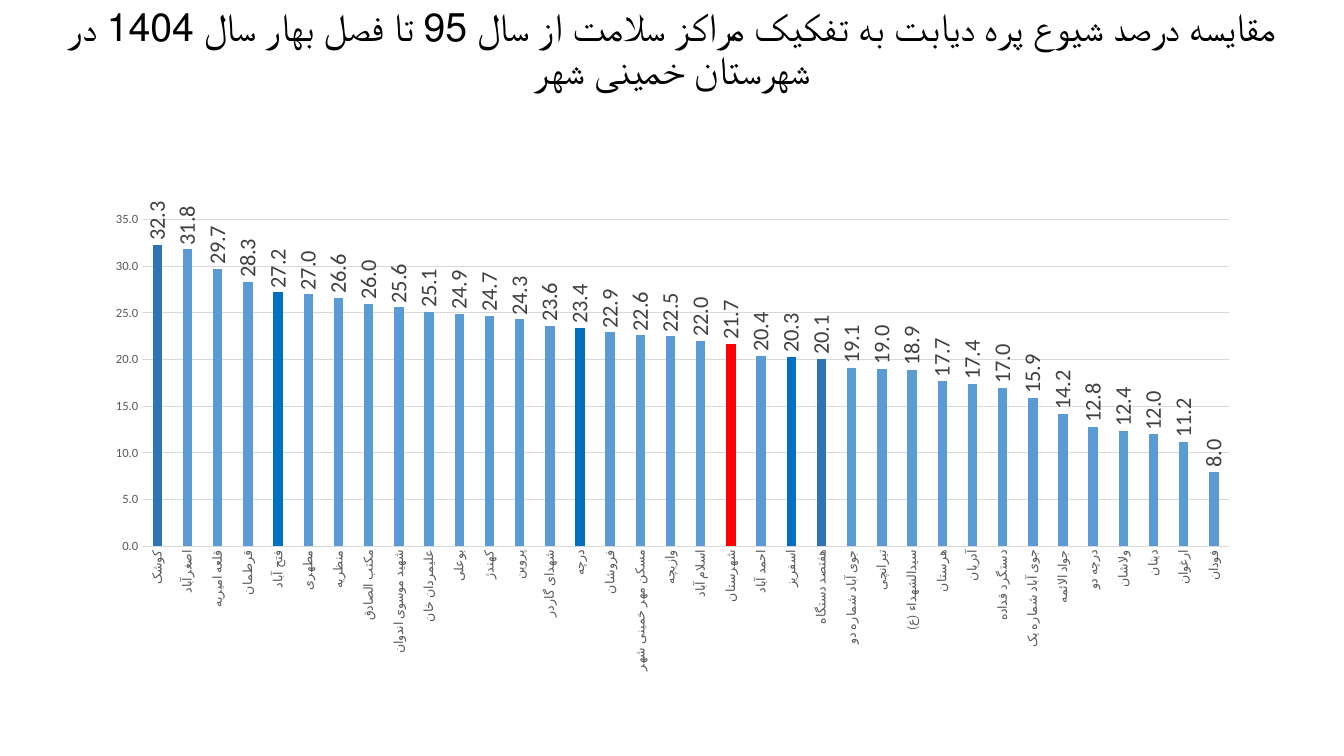
from dataclasses import dataclass

from pptx import Presentation
from pptx.chart.data import CategoryChartData
from pptx.dml.color import RGBColor
from pptx.enum.chart import XL_CHART_TYPE, XL_LABEL_POSITION, XL_TICK_MARK
from pptx.enum.text import MSO_ANCHOR, MSO_AUTO_SIZE, PP_ALIGN
from pptx.util import Inches, Pt

COLUMN = XL_CHART_TYPE.COLUMN_CLUSTERED
OUTER = XL_LABEL_POSITION.OUTSIDE_END
NO_TICK = XL_TICK_MARK.NONE
MIDDLE = MSO_ANCHOR.MIDDLE
NO_FIT = MSO_AUTO_SIZE.NONE
CENTER = PP_ALIGN.CENTER


@dataclass(frozen=True)
class Theme:
    font: str = "Calibri"
    ink: str = "000000"
    axis: str = "595959"
    label: str = "404040"
    grid: str = "D9D9D9"
    bar: str = "5B9BD5"
    deep: str = "2E75B6"
    blue: str = "0070C0"
    red: str = "FF0000"
    title_size: int = 28
    base_size: int = 10
    axis_size: int = 9
    label_size: int = 16


THEME = Theme()
WIDTH, HEIGHT = Inches(13.33), Inches(7.5)
UPRIGHT = "-5400000"
TITLE = ("مقایسه درصد شیوع پره دیابت به تفکیک مراکز سلامت از سال 95 "
         "تا فصل بهار سال 1404 در شهرستان خمینی شهر")
RATES = {
    "کوشک": 32.3, "اصغرآباد": 31.8, "قلعه امیریه": 29.7, "قرطمان": 28.3,
    "فتح آباد": 27.2, "مطهری": 27.0, "منظریه": 26.6, "مکتب الصادق": 26.0,
    "شهید موسوی اندوان": 25.6, "علیمردان خان": 25.1, "بوعلی": 24.9,
    "کهندژ": 24.7, "پروین": 24.3, "شهدای گاردر": 23.6, "درچه": 23.4,
    "فروشان": 22.9, "مسکن مهر خمینی شهر": 22.6, "وازیچه": 22.5,
    "اسلام آباد": 22.0, "شهرستان": 21.7, "احمد آباد": 20.4,
    "اسفریز": 20.3, "هفتصد دستگاه": 20.1, "جوی آباد شماره دو": 19.1,
    "تیرانچی": 19.0, "سیدالشهداء (ع)": 18.9, "هرستان": 17.7,
    "آدریان": 17.4, "دستگرد قداده": 17.0, "جوی آباد شماره یک": 15.9,
    "جواد الائمه": 14.2, "درچه دو": 12.8, "ولاشان": 12.4, "دینان": 12.0,
    "ارغوان": 11.2, "فودان": 8.0,
}
MARKED = {
    "کوشک": THEME.deep, "فتح آباد": THEME.blue, "درچه": THEME.blue,
    "شهرستان": THEME.red, "اسفریز": THEME.blue, "هفتصد دستگاه": THEME.deep,
}


def style(font, size, color):
    font.name = THEME.font
    font.size = Pt(size)
    font.bold = False
    font.color.rgb = RGBColor.from_string(color)


def paint(form, color):
    form.fill.solid()
    form.fill.fore_color.rgb = RGBColor.from_string(color)


def rule(line):
    line.width = Pt(0.75)
    line.color.rgb = RGBColor.from_string(THEME.grid)


def turn(part):
    """Make the text of an axis or label set read upwards."""
    body = part._element.find(".//{*}txPr/{*}bodyPr")
    body.set("rot", UPRIGHT)
    body.set("vert", "horz")


def add_title(slide, box):
    title = slide.shapes.title
    title.left, title.top, title.width, title.height = box
    frame = title.text_frame
    frame.word_wrap = True
    frame.auto_size = NO_FIT
    frame.vertical_anchor = MIDDLE
    para = frame.paragraphs[0]
    para.alignment = CENTER
    para.line_spacing = 0.9
    para._p.get_or_add_pPr().set("rtl", "1")
    run = para.add_run()
    run.text = TITLE
    style(run.font, THEME.title_size, THEME.ink)


def format_axes(chart):
    names, scale = chart.category_axis, chart.value_axis
    for axis in (names, scale):
        axis.major_tick_mark = axis.minor_tick_mark = NO_TICK
        style(axis.tick_labels.font, THEME.axis_size, THEME.axis)
    names.has_major_gridlines = False
    rule(names.format.line)
    turn(names)
    scale.has_major_gridlines = True
    rule(scale.major_gridlines.format.line)
    scale.format.line.fill.background()
    scale.minimum_scale, scale.maximum_scale, scale.major_unit = 0, 35, 5
    scale.tick_labels.number_format = "0.0"
    scale.tick_labels.number_format_is_linked = False


def format_bars(plot):
    plot.gap_width, plot.overlap = 219, -27
    plot.vary_by_categories = False
    bars = plot.series[0]
    bars.invert_if_negative = False
    paint(bars.format, THEME.bar)
    names = list(RATES)
    for name, color in MARKED.items():
        paint(bars.points[names.index(name)].format, color)
    labels = bars.data_labels
    labels.show_value = True
    labels.position = OUTER
    labels.number_format = "0.0"
    labels.number_format_is_linked = False
    style(labels.font, THEME.label_size, THEME.label)
    turn(labels)


def add_rates(slide, box):
    data = CategoryChartData(number_format="0.0")
    data.categories = list(RATES)
    data.add_series("Series 1", list(RATES.values()))
    chart = slide.shapes.add_chart(COLUMN, *box, data).chart
    chart.has_legend = chart.has_title = False
    style(chart.font, THEME.base_size, THEME.ink)
    format_axes(chart)
    format_bars(chart.plots[0])


def main():
    deck = Presentation()
    deck.slide_width, deck.slide_height = WIDTH, HEIGHT
    slide = deck.slides.add_slide(deck.slide_layouts.get_by_name("Title Only"))
    add_title(slide, (0, 0, WIDTH, Inches(1)))
    add_rates(slide, (Inches(0.92), Inches(2), Inches(11.5), Inches(4.76)))
    deck.save("out.pptx")


if __name__ == "__main__":
    main()
